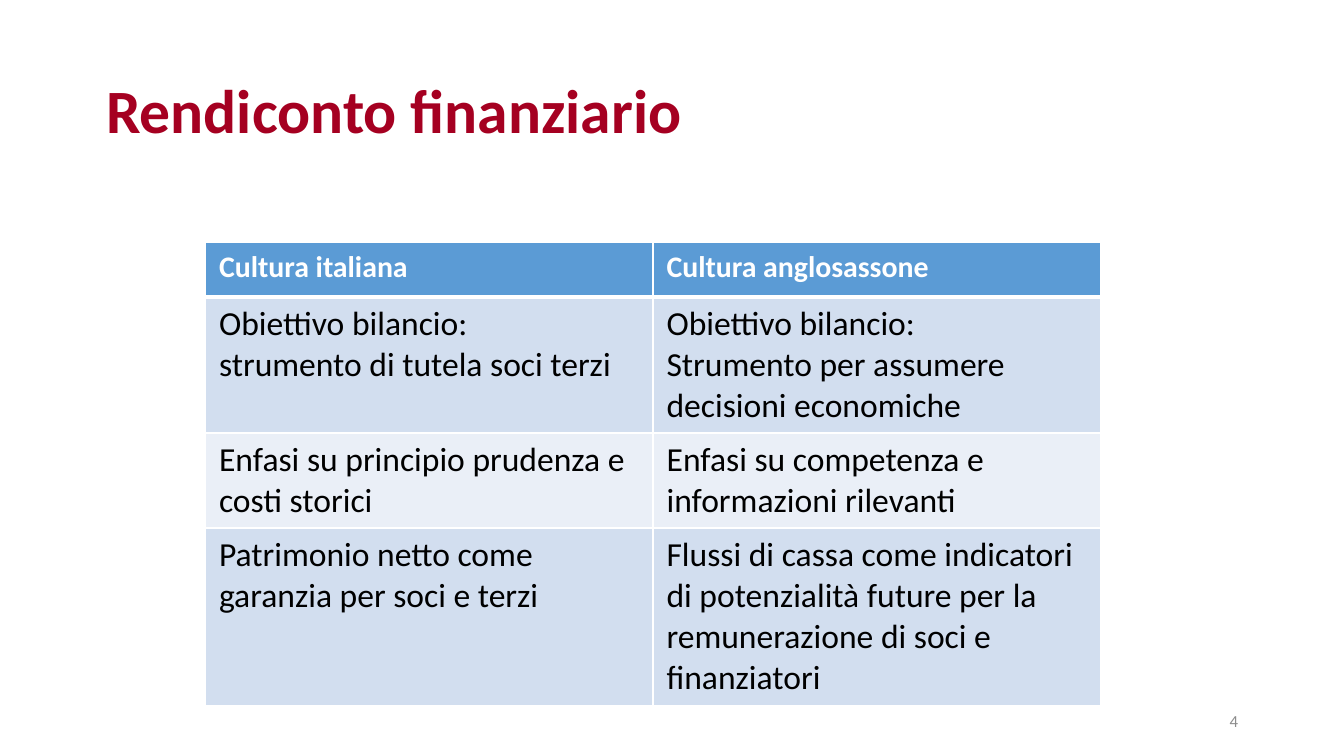
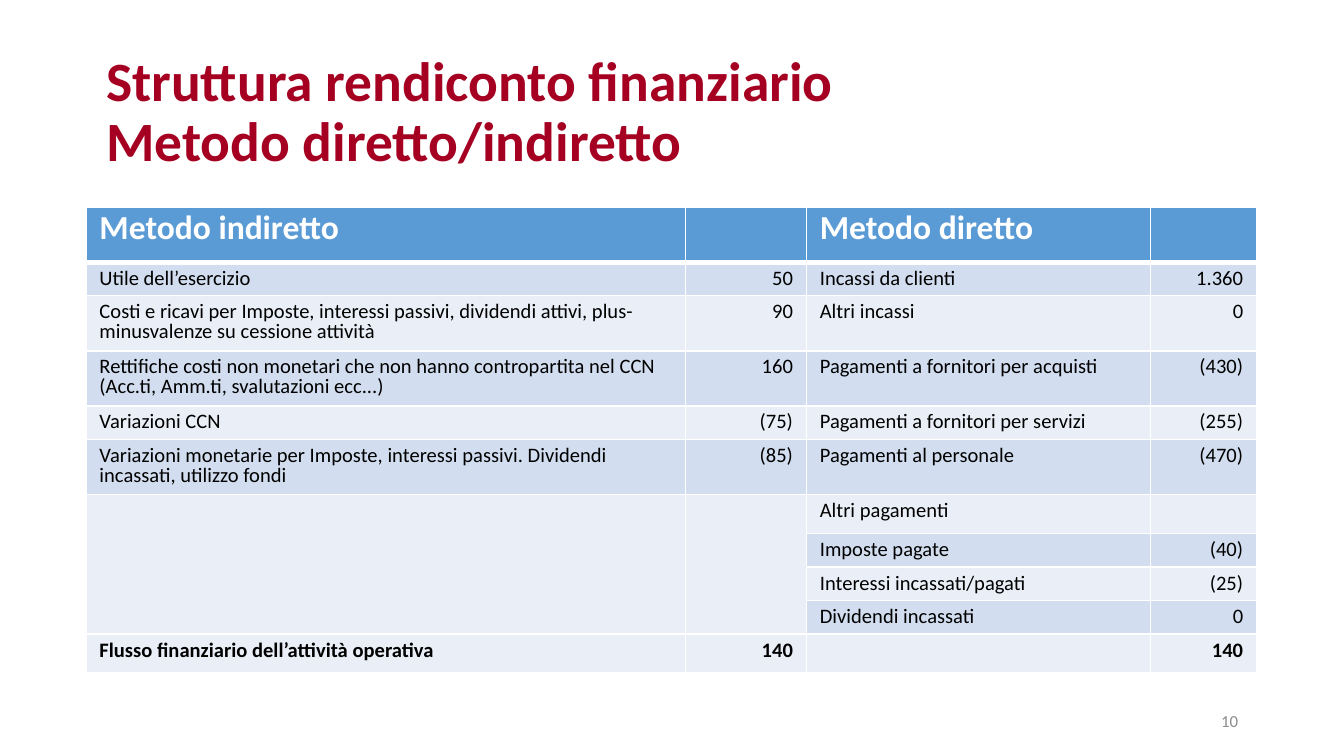
import pptx
import pptx.dml.color
import pptx.enum.text
import pptx.oxml
import pptx.oxml.ns
import pptx.util

Inches = pptx.util.Inches
Pt = pptx.util.Pt
RGBColor = pptx.dml.color.RGBColor
Align = pptx.enum.text.PP_ALIGN
Anchor = pptx.enum.text.MSO_ANCHOR

WHITE = RGBColor(0xFF, 0xFF, 0xFF)
BLACK = RGBColor(0x00, 0x00, 0x00)
GREY = RGBColor(0x8C, 0x8C, 0x8C)
CRIMSON = RGBColor(0xA5, 0x00, 0x21)
HEADER_BLUE = RGBColor(0x5B, 0x9B, 0xD5)
BANDS = (RGBColor(0xEA, 0xEF, 0xF7), RGBColor(0xD2, 0xDE, 0xEF))
FONT = "Calibri"

CULTURE_ROWS = [
    ("Cultura italiana", "Cultura anglosassone"),
    ("Obiettivo bilancio:\nstrumento di tutela soci terzi",
     "Obiettivo bilancio:\nStrumento per assumere decisioni economiche"),
    ("Enfasi su principio prudenza e costi storici",
     "Enfasi su competenza e informazioni rilevanti"),
    ("Patrimonio netto come garanzia per soci e terzi",
     "Flussi di cassa come indicatori di potenzialità future per la "
     "remunerazione di soci e finanziatori"),
]

METHOD_ROWS = [
    ("Metodo indiretto", "", "Metodo diretto", ""),
    ("Utile dell’esercizio", "50", "Incassi da clienti", "1.360"),
    ("Costi e ricavi per Imposte, interessi passivi, dividendi attivi, "
     "plus-minusvalenze su cessione attività", "90", "Altri incassi", "0"),
    ("Rettifiche costi non monetari che non hanno contropartita nel CCN "
     "(Acc.ti, Amm.ti, svalutazioni ecc...)", "160",
     "Pagamenti a fornitori per acquisti", "(430)"),
    ("Variazioni CCN", "(75)", "Pagamenti a fornitori per servizi", "(255)"),
    ("Variazioni monetarie per Imposte, interessi passivi. Dividendi "
     "incassati, utilizzo fondi", "(85)", "Pagamenti al personale", "(470)"),
    ("", "", "Altri pagamenti", ""),
    ("", "", "Imposte pagate", "(40)"),
    ("", "", "Interessi incassati/pagati", "(25)"),
    ("", "", "Dividendi incassati", "0"),
    ("Flusso finanziario dell’attività operativa", "140", "", "140"),
]


def add_element(parent, tag, **attributes):
    child = parent.makeelement(pptx.oxml.ns.qn(tag), attributes)
    parent.append(child)
    return child


def write_text(frame, text, size, color=BLACK, bold=False, align=Align.LEFT,
               line_spacing=1.0):
    """Write one paragraph per line; a vertical tab breaks within a paragraph."""
    for index, line in enumerate(text.split("\n")):
        paragraph = frame.paragraphs[0] if index == 0 else frame.add_paragraph()
        paragraph.text = line
        paragraph.alignment = align
        paragraph.line_spacing = line_spacing
        for run in paragraph.runs:
            run.font.name = FONT
            run.font.size = Pt(size)
            run.font.bold = bold
            run.font.color.rgb = color
        # Line breaks and empty paragraphs take their height from these sizes.
        points = str(round(size * 100))
        for line_break in paragraph._p.findall(pptx.oxml.ns.qn("a:br")):
            add_element(line_break, "a:rPr", sz=points)
        add_element(paragraph._p, "a:endParaRPr", sz=points)


def set_borders(cell, top, bottom):
    properties = cell._tc.get_or_add_tcPr()
    for side, width in (("L", 1), ("R", 1), ("T", top), ("B", bottom)):
        line = add_element(properties, f"a:ln{side}", w=str(Pt(width)))
        fill = add_element(line, "a:solidFill")
        add_element(fill, "a:srgbClr", val=str(WHITE))


class Deck:
    def __init__(self):
        self.presentation = pptx.Presentation()
        self.presentation.slide_width = Inches(10)
        self.presentation.slide_height = Inches(10) * 9 // 16
        self.slide = None

    def add_slide(self, title, title_size, number):
        layout = self.presentation.slide_layouts[5]
        self.slide = self.presentation.slides.add_slide(layout)
        self.add_title(title, title_size)
        self.add_number(number)

    def add_title(self, text, size):
        shape = self.slide.shapes.title
        shape.left, shape.top = Inches(0.69), Inches(0.3)
        shape.width, shape.height = Inches(8.62), Inches(1.09)
        shape.fill.solid()
        shape.fill.fore_color.rgb = WHITE
        color = shape._element.spPr.find(".//" + pptx.oxml.ns.qn("a:srgbClr"))
        add_element(color, "a:alpha", val="20000")
        frame = shape.text_frame
        frame.word_wrap = True
        frame.auto_size = pptx.enum.text.MSO_AUTO_SIZE.NONE
        frame.vertical_anchor = Anchor.MIDDLE
        write_text(frame, text, size, color=CRIMSON, bold=True, line_spacing=0.9)

    def add_number(self, number):
        box = self.slide.shapes.add_textbox(
            Inches(7.06), Inches(5.21), Inches(2.25), Inches(0.3))
        box.text_frame.word_wrap = True
        box.text_frame.vertical_anchor = Anchor.MIDDLE
        write_text(box.text_frame, str(number), 9, color=GREY, align=Align.RIGHT)

    def add_table(self, rows, left, top, widths, heights, header_size, body_size,
                  line_spacing=1.0, number_columns=(), total_row=None):
        table = self.slide.shapes.add_table(
            len(rows), len(widths), Inches(left), Inches(top),
            Inches(sum(widths)), Inches(sum(heights))).table
        table.horz_banding = False
        for column, width in zip(table.columns, widths):
            column.width = Inches(width)
        for row, height in zip(table.rows, heights):
            row.height = Inches(height)
        for row_index, texts in enumerate(rows):
            header = row_index == 0
            for column_index, text in enumerate(texts):
                cell = table.cell(row_index, column_index)
                set_borders(cell, top=3 if row_index == 1 else 1,
                            bottom=3 if header else 1)
                cell.fill.solid()
                cell.fill.fore_color.rgb = (
                    HEADER_BLUE if header else BANDS[row_index % 2])
                write_text(
                    cell.text_frame, text,
                    size=header_size if header else body_size,
                    color=WHITE if header else BLACK,
                    bold=header or row_index == total_row,
                    align=Align.RIGHT if column_index in number_columns else Align.LEFT,
                    line_spacing=line_spacing)
        return table


def main():
    deck = Deck()

    deck.add_slide("Rendiconto finanziario", 33, 4)
    deck.add_table(CULTURE_ROWS, 1.53, 1.8, widths=[3.33] * 2,
                   heights=[0.41, 1.01, 0.71, 1.32],
                   header_size=16, body_size=18)

    deck.add_slide("Struttura rendiconto finanziario\vMetodo diretto/indiretto",
                   29.7, 10)
    methods = deck.add_table(
        METHOD_ROWS, 0.64, 1.54, widths=[4.46, 0.9, 2.56, 0.79],
        heights=[0.41, 0.25, 0.41, 0.41, 0.25, 0.41, 0.29, 0.25, 0.25, 0.25, 0.29],
        header_size=18, body_size=11, line_spacing=0.8,
        number_columns=(1, 3), total_row=len(METHOD_ROWS) - 1)
    for column in (0, 1):
        methods.cell(6, column).merge(methods.cell(9, column))

    deck.presentation.save("out.pptx")


if __name__ == "__main__":
    main()
